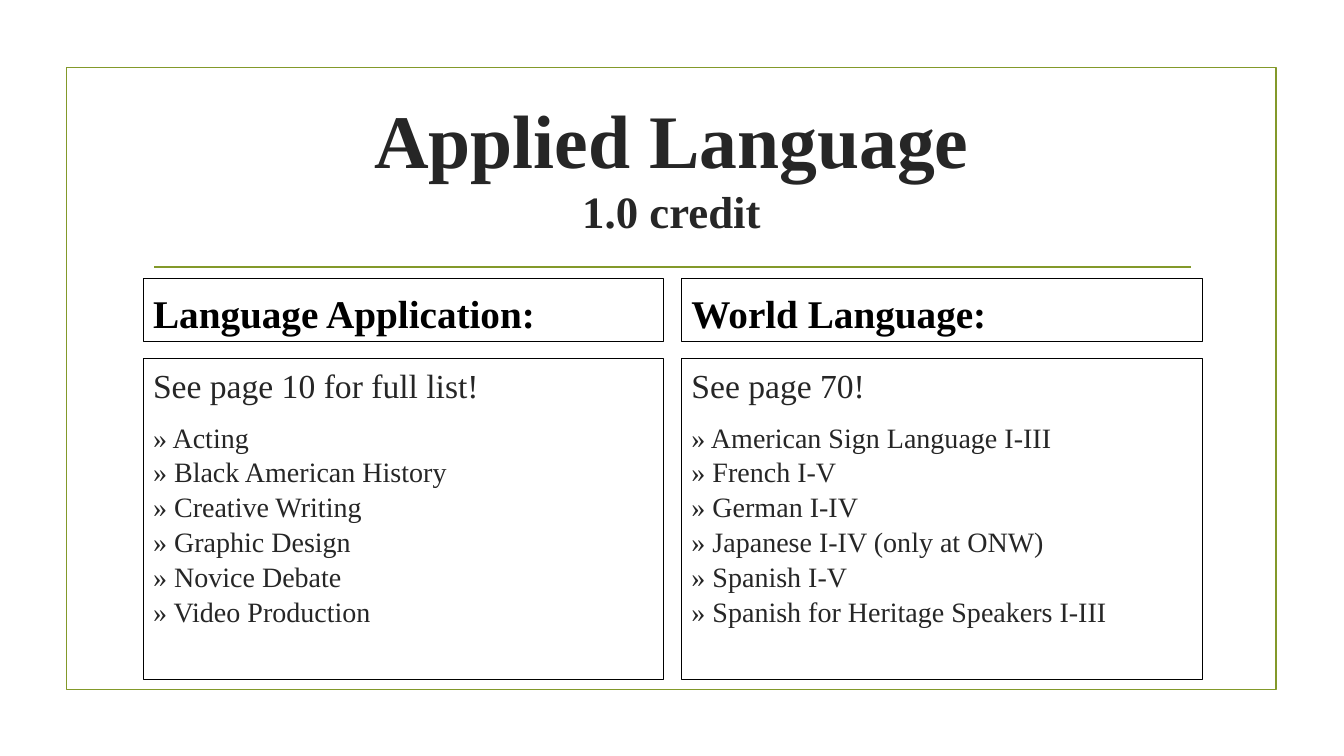
from lxml.etree import SubElement
from pptx import Presentation
from pptx.dml.color import RGBColor
from pptx.enum.shapes import MSO_CONNECTOR, MSO_SHAPE
from pptx.enum.text import MSO_ANCHOR, PP_ALIGN
from pptx.oxml.ns import qn
from pptx.util import Inches, Pt

GREEN, BLACK, DARK = "83992A", "000000", "262626"
COLUMNS = [
    ("Language Application:", "See page 10 for full list!",
     ["Acting", "Black American History", "Creative Writing",
      "Graphic Design", "Novice Debate", "Video Production"]),
    ("World Language:", "See page 70!",
     ["American Sign Language I-III", "French I-V", "German I-IV",
      "Japanese I-IV (only at ONW)", "Spanish I-V",
      "Spanish for Heritage Speakers I-III"]),
]


def color(value):
    return RGBColor.from_string(value)


def apply(target, values):
    for name, value in values.items():
        setattr(target, name, value)


class CoursePage:
    font = "Times New Roman"

    def __init__(self, deck):
        self.page = deck.slides.add_slide(deck.slide_layouts[5])

    def add_lines(self, para, lines, size, ink=DARK, bold=False):
        for index, line in enumerate(lines):
            if index:
                para.add_line_break()
            span = para.add_run()
            span.text = line
            apply(span.font, {"name": self.font, "size": Pt(size), "bold": bold})
            span.font.color.rgb = color(ink)

    def title(self, heading, credit):
        box = self.page.shapes.title
        apply(box, {"left": Inches(0.74), "top": Inches(0.67),
                    "width": Inches(11.84), "height": Inches(1.94)})
        apply(box.text_frame, {"word_wrap": True, "vertical_anchor": MSO_ANCHOR.MIDDLE})
        para = box.text_frame.paragraphs[0]
        apply(para, {"alignment": PP_ALIGN.CENTER, "line_spacing": 1.0})
        self.add_lines(para, [heading], 54, bold=True)
        para.add_line_break()
        self.add_lines(para, [credit], 32, bold=True)

    def outline(self, left, top, width, height, ink, weight):
        box = self.page.shapes.add_shape(
            MSO_SHAPE.RECTANGLE, Inches(left), Inches(top), Inches(width), Inches(height))
        box.shadow.inherit = False
        box.fill.background()
        box.line.color.rgb = color(ink)
        box.line.width = Pt(weight)
        return box

    def rule(self, left, right, top):
        line = self.page.shapes.add_connector(
            MSO_CONNECTOR.STRAIGHT, Inches(left), Inches(top), Inches(right), Inches(top))
        line.line.color.rgb = color(GREEN)
        line.line.width = Pt(1.25)
        SubElement(line._element.spPr, qn("a:effectLst"))

    def panel(self, left, top, height, anchor, blocks):
        box = self.outline(left, top, 5.16, height, BLACK, 0.25)
        frame = box.text_frame
        apply(frame, {"word_wrap": True, "vertical_anchor": anchor})
        for index, block in enumerate(blocks):
            para = frame.add_paragraph() if index else frame.paragraphs[0]
            apply(para, {"alignment": PP_ALIGN.LEFT, "line_spacing": 1.04,
                         "space_before": Pt(4 if index else 0), "space_after": Pt(6)})
            self.add_lines(para, **block)


def main():
    deck = Presentation()
    apply(deck, {"slide_width": Inches(13.33), "slide_height": Inches(7.5)})
    slide = CoursePage(deck)
    slide.outline(0.66, 0.67, 12, 6.17, GREEN, 1.25)
    slide.rule(1.53, 11.81, 2.65)
    slide.title("Applied Language", "1.0 credit")
    for index, (heading, note, courses) in enumerate(COLUMNS):
        left = 1.42 + index * 5.34
        slide.panel(left, 2.76, 0.63, MSO_ANCHOR.BOTTOM,
                    [{"lines": [heading], "size": 28, "ink": BLACK, "bold": True}])
        slide.panel(left, 3.55, 3.19, MSO_ANCHOR.TOP,
                    [{"lines": [note], "size": 24},
                     {"lines": [f"» {course}" for course in courses], "size": 20}])
    deck.save("out.pptx")


if __name__ == "__main__":
    main()
